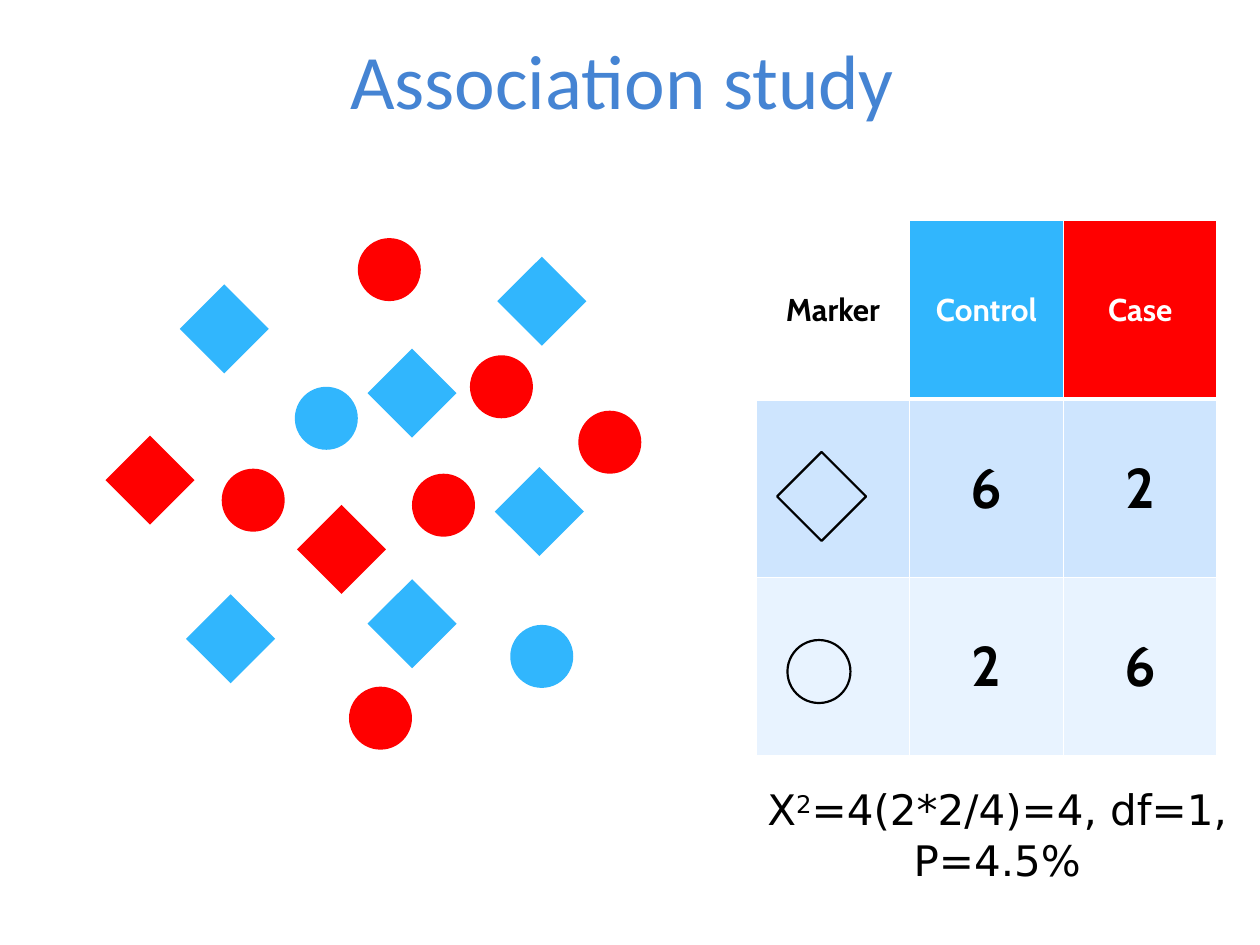
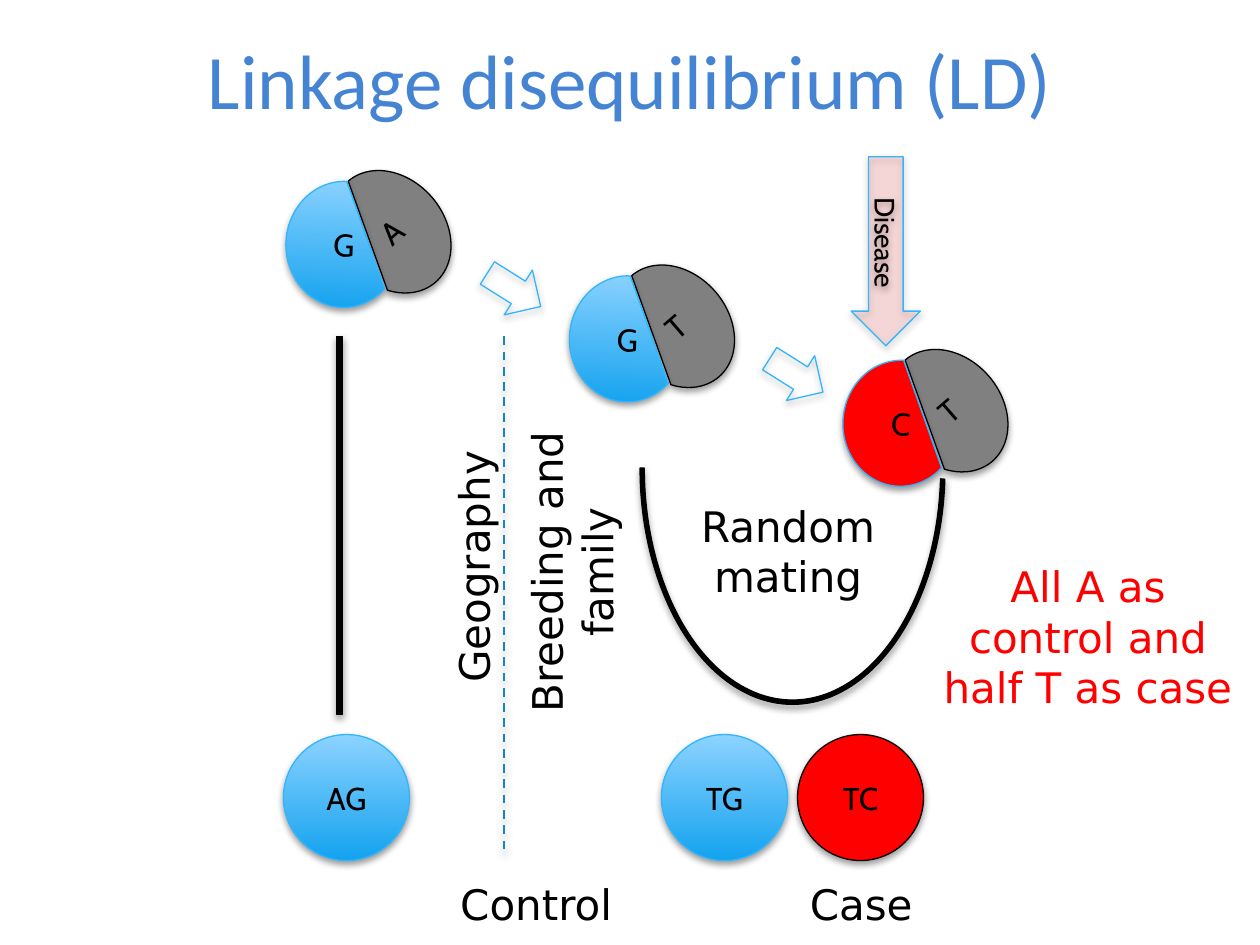
from typing import NamedTuple, Optional

import lxml.etree
import pptx
import pptx.dml.color
import pptx.enum.dml
import pptx.enum.shapes
import pptx.enum.text
import pptx.oxml.ns
import pptx.util

SHAPE = pptx.enum.shapes.MSO_SHAPE
qn = pptx.oxml.ns.qn

WIDTH, HEIGHT = pptx.util.Inches(10), pptx.util.Inches(7.5)
COL, ROW = WIDTH / 100, HEIGHT / 75  # the grid has 100 columns and 75 rows

COLOURS = {
    "title": "4584D3", "black": "000000", "white": "FFFFFF", "grey": "808080",
    "control": "31B6FD", "case": "FF0000", "sky_top": "8CD3FF", "sky_bottom": "14A2EF",
    "band_dark": "CEE5FE", "band_light": "E8F3FF", "divider": "1C83B9", "divider_shadow": "0F405B",
}


class Box(NamedTuple):
    """A place on the grid."""
    col: float
    row: float
    cols: float
    rows: float

    def emu(self) -> list[int]:
        return [round(n * unit) for n, unit in zip(self, (COL, ROW, COL, ROW))]


class Marker(NamedTuple):
    """One subject of the association study; diamonds and circles are the two alleles."""
    allele: str
    fill: Optional[str]
    col: float
    row: float


class Chromosome(NamedTuple):
    """A gene half and a marker half that touch along their chords."""
    gene: str
    marker: str
    fill: str
    col: float
    row: float


class Label(NamedTuple):
    text: str
    box: Box
    rotation: float = 0
    colour: str = "black"


MARKERS = [
    Marker("circle", "control", 40.5, 49.6), Marker("diamond", "control", 40.5, 21.4),
    Marker("circle", "case", 27.7, 54.5), Marker("diamond", "case", 24.6, 41.1),
    Marker("diamond", "control", 40.3, 38.1), Marker("circle", "case", 32.7, 37.6),
    Marker("diamond", "control", 15.8, 48.2), Marker("circle", "case", 28.4, 18.9),
    Marker("diamond", "control", 15.3, 23.6), Marker("circle", "case", 37.3, 28.2),
    Marker("circle", "control", 23.4, 30.7), Marker("diamond", "case", 9.4, 35.6),
    Marker("diamond", None, 62.7, 36.9), Marker("circle", None, 62.5, 50.8),
    Marker("diamond", "control", 30.2, 47), Marker("circle", "case", 17.6, 37.2),
    Marker("diamond", "control", 30.2, 28.7), Marker("circle", "case", 45.9, 32.6),
]
MARKER_SIZE = 5

COUNTS = [["Marker", "Control", "Case"], ["", "6", "2"], ["", "2", "6"]]
HEADER_FILLS = ["white", "control", "case"]
BAND_FILLS = ["band_dark", "band_light"]

CHROMOSOMES = [
    Chromosome("G", "A", "sky", 22.7, 14.4),
    Chromosome("G", "T", "sky", 45.2, 21.9),
    Chromosome("C", "T", "case", 66.9, 28.6),
]
LABELS = [
    Label("Random mating", Box(49.2, 39.2, 26.7, 4)),
    Label("Control", Box(29.2, 69.2, 26.7, 4)),
    Label("Case", Box(55, 69.2, 26.7, 4)),
    Label("Geography", Box(23.7, 43, 26.7, 4), 270),
    Label("Breeding and family", Box(26.6, 43.4, 32.5, 4), 270),
    Label("All A as control and half T as case", Box(73, 44, 26.7, 13.1), 0, "case"),
]


def rgb(name: str):
    return pptx.dml.color.RGBColor.from_string(COLOURS[name])


def style_text(tf, font: str, size: float, colour: str, bold: Optional[bool] = None) -> None:
    for p in tf.paragraphs:
        p.alignment = pptx.enum.text.PP_ALIGN.CENTER
        for r in p.runs:
            r.font.name, r.font.size, r.font.bold = font, pptx.util.Pt(size), bold
            r.font.color.rgb = rgb(colour)


def add_text(s, text: str, box: Box):
    sp = s.shapes.add_textbox(*box.emu())
    sp.text_frame.word_wrap = True
    sp.text_frame.text = text
    return sp


def add_title(s, text: str, col: float = 5) -> None:
    tf = add_text(s, text, Box(col, 0, 90, 12.5)).text_frame
    tf.vertical_anchor = pptx.enum.text.MSO_ANCHOR.MIDDLE
    style_text(tf, "Calibri", 44, "title")


def add_label(s, label: Label):
    sp = add_text(s, label.text, label.box)
    sp.rotation = label.rotation
    sp.text_frame.auto_size = pptx.enum.text.MSO_AUTO_SIZE.SHAPE_TO_FIT_TEXT
    style_text(sp.text_frame, "DejaVu Sans", 24, label.colour)
    return sp


def add_shape(s, kind, box: Box, fill: Optional[str] = None, line: Optional[str] = None,
              weight: float = 0.75, rotation: float = 0, flip: str = ""):
    """Draw a preset shape; the fill "sky" is a vertical gradient."""
    sp = s.shapes.add_shape(kind, *box.emu())
    sp.shadow.inherit = False
    sp.rotation = rotation
    if flip:
        sp.element.spPr.find(qn("a:xfrm")).set(flip, "1")
    if fill == "sky":
        sp.fill.gradient()
        sp.fill.gradient_angle = 270
        for stop, name in zip(sp.fill.gradient_stops, ("sky_top", "sky_bottom")):
            stop.color.rgb = rgb(name)
            stop.position = float(name == "sky_bottom")
    elif fill:
        sp.fill.solid()
        sp.fill.fore_color.rgb = rgb(fill)
    else:
        sp.fill.background()
    if line:
        sp.line.color.rgb = rgb(line)
        sp.line.width = pptx.util.Pt(weight)
    else:
        sp.line.fill.background()
    return sp


def add_shadow(sp, colour: str = "black", alpha: int = 38, blur: float = 4, dist: float = 2) -> None:
    spPr = sp.element.spPr
    effects = spPr.find(qn("a:effectLst"))
    if effects is None:
        effects = lxml.etree.SubElement(spPr, qn("a:effectLst"))
    shadow = lxml.etree.SubElement(
        effects, qn("a:outerShdw"), blurRad=str(pptx.util.Pt(blur)),
        dist=str(pptx.util.Pt(dist)), dir="5400000", rotWithShape="0")
    clr = lxml.etree.SubElement(shadow, qn("a:srgbClr"), val=COLOURS[colour])
    lxml.etree.SubElement(clr, qn("a:alpha"), val=str(alpha * 1000))


def add_raised(s, kind, box: Box, text: str = "", size: float = 18, **look):
    """Draw a shape with the soft shadow and an optional centred letter or word."""
    sp = add_shape(s, kind, box, **look)
    add_shadow(sp)
    if text:
        sp.text_frame.text = text
        sp.text_frame.vertical_anchor = pptx.enum.text.MSO_ANCHOR.MIDDLE
        style_text(sp.text_frame, "Cabin", size, "black")
    return sp


def add_chromosome(s, c: Chromosome) -> None:
    add_raised(s, SHAPE.CHORD, Box(c.col + 4.2, c.row - 1.3, 8.4, 10.6), c.marker,
               fill="grey", line="black", rotation=319.2, flip="flipH")
    add_raised(s, SHAPE.CHORD, Box(c.col, c.row, 9.2, 10), c.gene,
               fill=c.fill, line="control", rotation=2.5)


def set_borders(cell, widths: dict[str, float]) -> None:
    tcPr = cell._tc.get_or_add_tcPr()
    for i, (side, width) in enumerate(widths.items()):
        ln = lxml.etree.Element(qn(f"a:ln{side}"), w=str(pptx.util.Pt(width)))
        fill = lxml.etree.SubElement(ln, qn("a:solidFill"))
        lxml.etree.SubElement(fill, qn("a:srgbClr"), val=COLOURS["white"])
        tcPr.insert(i, ln)


def add_count_table(s) -> None:
    table = s.shapes.add_table(3, 3, *Box(60, 17.5, 36.6, 42.5).emu()).table
    table.first_row = table.horz_banding = False
    for i, row in enumerate(COUNTS):
        for j, text in enumerate(row):
            cell = table.cell(i, j)
            cell.text = text
            cell.vertical_anchor = pptx.enum.text.MSO_ANCHOR.MIDDLE
            cell.fill.solid()
            cell.fill.fore_color.rgb = rgb(BAND_FILLS[i - 1] if i else HEADER_FILLS[j])
            style_text(cell.text_frame, "Cabin", 32 if i else 18,
                       "white" if i == 0 and j else "black", True)
            set_borders(cell, {"L": 1, "R": 1, "T": 3 if i == 1 else 1, "B": 1 if i else 3})


def build_association(s) -> None:
    add_title(s, "Association study", 4.4)
    add_count_table(s)
    for m in MARKERS:
        diamond = m.allele == "diamond"
        add_shape(s, SHAPE.RECTANGLE if diamond else SHAPE.OVAL,
                  Box(m.col, m.row, MARKER_SIZE, MARKER_SIZE), m.fill,
                  None if m.fill else "black", 1.25, 135 if diamond else 0)
    test = Label("X", Box(58.3, 61.7, 41.7, 9.1))
    tf = add_label(s, test).text_frame
    p = tf.paragraphs[0]
    power, rest = p.add_run(), p.add_run()
    power.text, rest.text = "2", "=4(2*2/4)=4, df=1, P=4.5%"
    style_text(tf, "DejaVu Sans", 24, "black")
    power._r.get_or_add_rPr().set("baseline", "30000")


def build_linkage(s) -> None:
    add_title(s, "Linkage disequilibrium (LD)")
    for c in CHROMOSOMES:
        add_chromosome(s, c)
    for col, row in ((38.3, 20.9), (60.7, 27.7)):
        add_raised(s, SHAPE.RIGHT_ARROW, Box(col, row, 5, 4.2), line="control", rotation=32.2)

    mating = add_raised(s, SHAPE.BLOCK_ARC, Box(50.8, 18.4, 24.2, 37.5),
                        fill="black", line="black", flip="flipV")
    for i, value in enumerate((108, 213.5, 0.014)):
        mating.adjustments[i] = value
    add_raised(s, SHAPE.RECTANGLE, Box(26.7, 26.7, 0.5, 30), fill="black", line="black")

    for text, col, fill, line in (("AG", 22.5, "sky", "control"), ("TG", 52.5, "sky", "control"),
                                  ("TC", 63.3, "case", "black")):
        add_raised(s, SHAPE.OVAL, Box(col, 58.3, 10, 10), text, fill=fill, line=line)

    x, top, _, height = Box(40, 26.7, 0, 40.8).emu()
    divider = s.shapes.add_connector(pptx.enum.shapes.MSO_CONNECTOR.STRAIGHT, x, top, x, top + height)
    divider.line.color.rgb = rgb("divider")
    divider.line.width = pptx.util.Pt(1.25)
    divider.line.dash_style = pptx.enum.dml.MSO_LINE.DASH
    add_shadow(divider, "divider_shadow", 48, 4.5, 3)

    for label in LABELS:
        add_label(s, label)
    disease = add_raised(s, SHAPE.RIGHT_ARROW, Box(62.8, 17.2, 15, 5.5), "Disease", 16,
                         fill="case", line="control", rotation=90)
    clr = disease.element.spPr.find(qn("a:solidFill")).find(qn("a:srgbClr"))
    lxml.etree.SubElement(clr, qn("a:alpha"), val="12000")


def main() -> None:
    prs = pptx.Presentation()
    prs.slide_width, prs.slide_height = WIDTH, HEIGHT
    for build in (build_association, build_linkage):
        build(prs.slides.add_slide(prs.slide_layouts[6]))
    prs.save("out.pptx")


if __name__ == "__main__":
    main()
